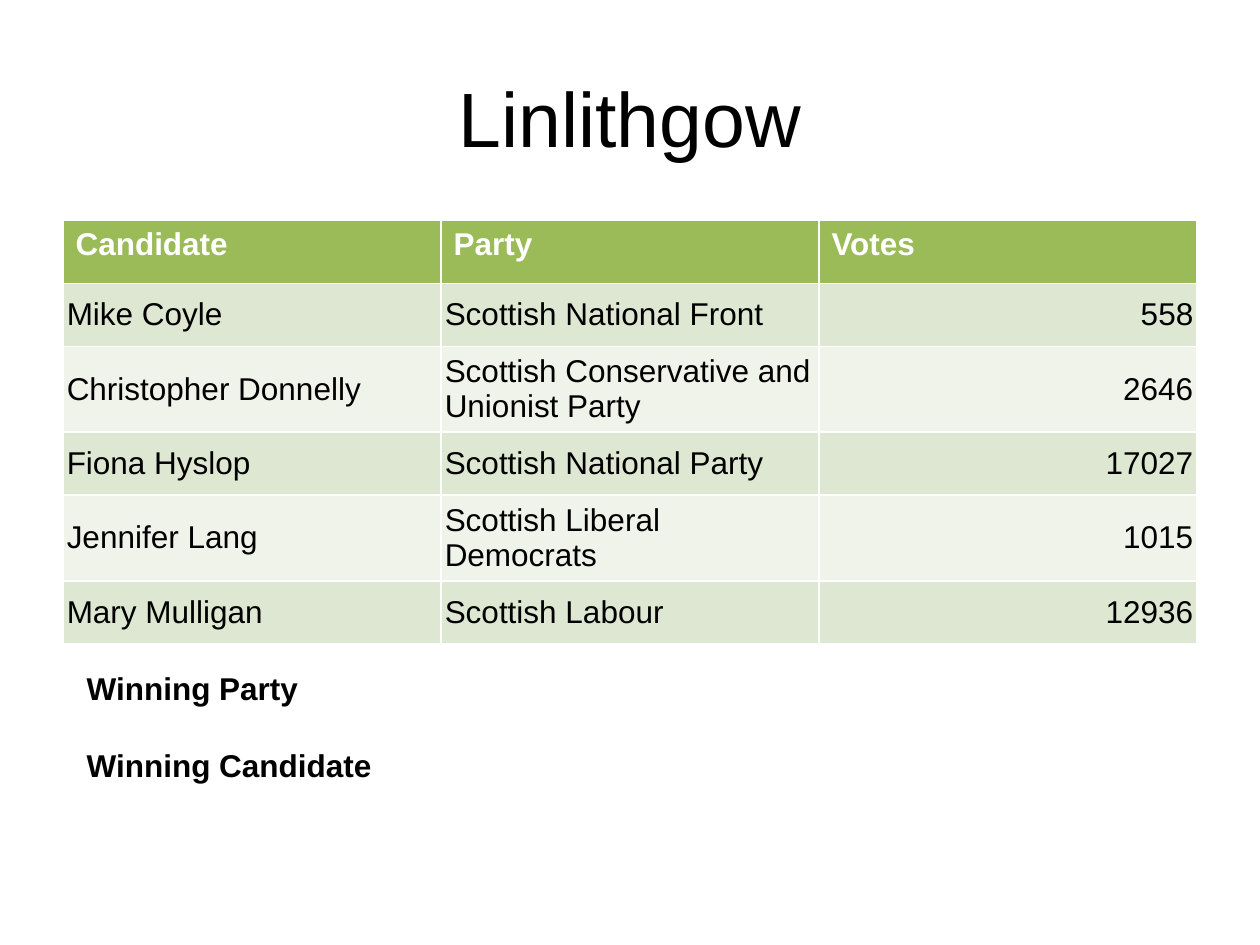
"""Build the Linlithgow election result slide."""
from typing import NamedTuple

from pptx import Presentation
from pptx.dml.color import RGBColor
from pptx.enum.text import MSO_ANCHOR, PP_ALIGN
from pptx.util import Inches, Pt

COLORS = {
    "text": "000000",
    "white": "FFFFFF",
    "head": "9BBB59",
    "odd": "DEE7D1",
    "even": "EFF3EA",
}


class Result(NamedTuple):
    """One candidate's result."""
    name: str
    party: str
    votes: int


HEADS = ("Candidate", "Party", "Votes")
RESULTS = (
    Result("Mike Coyle", "Scottish National Front", 558),
    Result("Christopher Donnelly", "Scottish Conservative and Unionist Party", 2646),
    Result("Fiona Hyslop", "Scottish National Party", 17027),
    Result("Jennifer Lang", "Scottish Liberal Democrats", 1015),
    Result("Mary Mulligan", "Scottish Labour", 12936),
)
LABELS = ("Winning Party", "Winning Candidate")


def style(para, size: int, color: str = "text", bold: bool = False) -> None:
    """Set the font of a paragraph."""
    font = para.font
    font.name, font.size, font.bold = "Arial", Pt(size), bold
    font.color.rgb = RGBColor.from_string(COLORS[color])


def fill(cell, text: str, back: str, color: str = "text", bold: bool = False) -> None:
    """Write a table cell on a solid background."""
    cell.text = text
    cell.fill.solid()
    cell.fill.fore_color.rgb = RGBColor.from_string(COLORS[back])
    style(cell.text_frame.paragraphs[0], 18, color, bold)


def add_title(slide, text: str) -> None:
    """Place and format the title."""
    title = slide.shapes.title
    title.left, title.top = Inches(0.5), Inches(0.3)
    title.width, title.height = Inches(9), Inches(1.25)
    title.text_frame.text = text
    title.text_frame.vertical_anchor = MSO_ANCHOR.MIDDLE
    para = title.text_frame.paragraphs[0]
    para.alignment = PP_ALIGN.CENTER
    style(para, 44)


def add_results(slide) -> None:
    """Draw the table of results."""
    count = len(RESULTS) + 1
    table = slide.shapes.add_table(
        count, len(HEADS), Inches(0.5), Inches(1.75), Inches(9), Inches(0.5 * count)
    ).table
    for col, head in enumerate(HEADS):
        fill(table.cell(0, col), head, "head", "white", True)
    for row, result in enumerate(RESULTS, 1):
        for col, value in enumerate(result):
            cell = table.cell(row, col)
            fill(cell, str(value), "odd" if row % 2 else "even")
            cell.vertical_anchor = MSO_ANCHOR.MIDDLE
            cell.margin_left = cell.margin_right = Inches(0.03)
            cell.margin_top = cell.margin_bottom = Inches(0.06)
            if isinstance(value, int):
                cell.text_frame.paragraphs[0].alignment = PP_ALIGN.RIGHT


def add_labels(slide) -> None:
    """Write the labels under the table."""
    box = slide.shapes.add_textbox(Inches(0.59), Inches(5.26), Inches(8.5), Inches(1.01))
    frame = box.text_frame
    frame.word_wrap = True
    frame.text = "\n".join(LABELS)
    for para in frame.paragraphs:
        style(para, 18, bold=True)
    frame.paragraphs[-1].space_before = Pt(22.5)


def main() -> None:
    """Build and save the deck."""
    deck = Presentation()
    deck.slide_width, deck.slide_height = Inches(10), Inches(7.5)
    slide = deck.slides.add_slide(deck.slide_layouts[5])
    add_title(slide, "Linlithgow")
    add_results(slide)
    add_labels(slide)
    deck.save("out.pptx")


if __name__ == "__main__":
    main()
